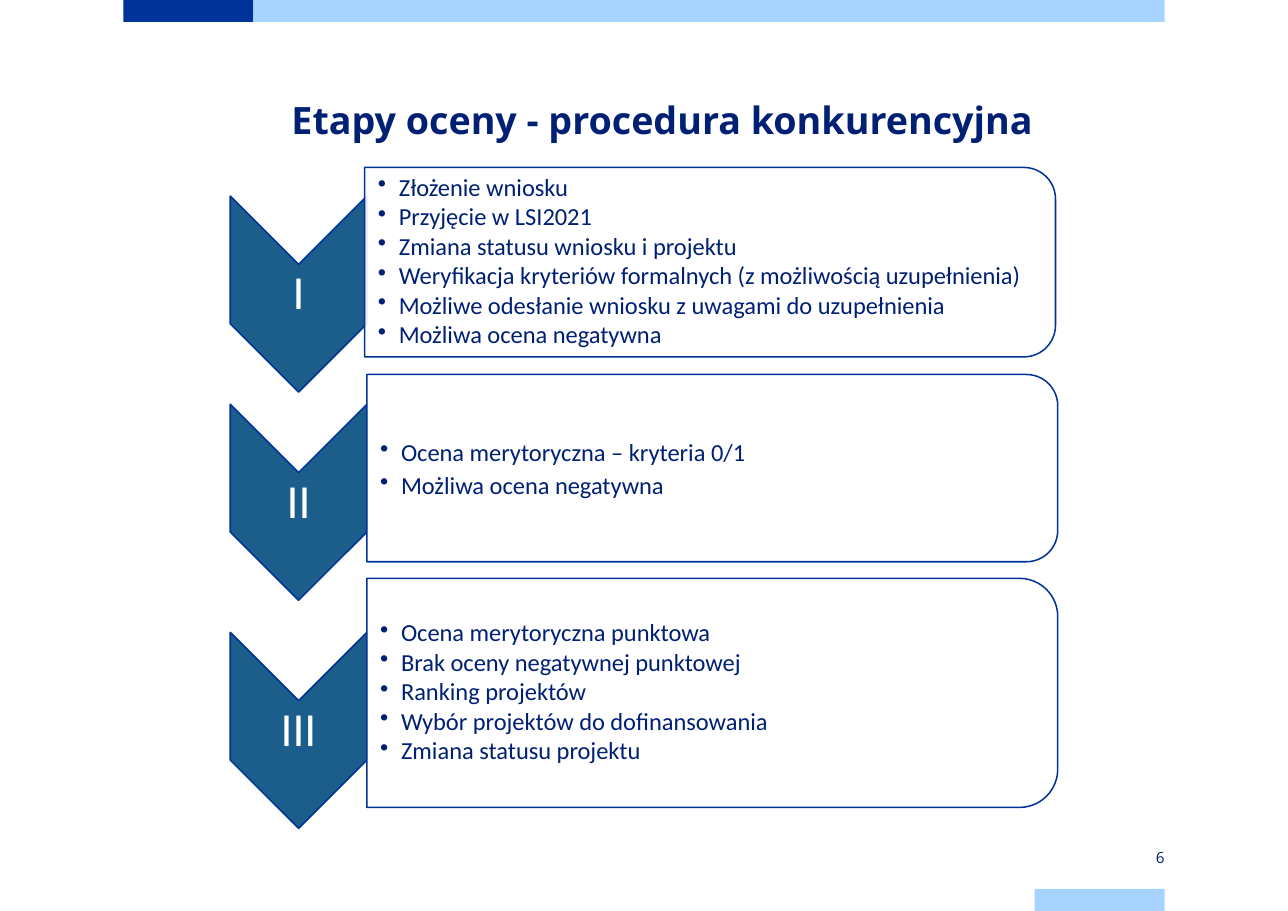
from lxml.etree import SubElement
from pptx import Presentation
from pptx.dml.color import RGBColor
from pptx.enum.shapes import MSO_SHAPE
from pptx.enum.text import MSO_ANCHOR, PP_ALIGN
from pptx.oxml.ns import qn
from pptx.util import Inches, Pt

COLORS = {
    "navy": "003399",
    "sky": "A6D3FF",
    "text": "002073",
    "steel": "1B5D8B",
    "white": "FFFFFF",
}

BARS = [
    (1.12, 0, 1.18, "navy"),
    (2.3, 0, 8.27, "sky"),
    (9.39, 8.07, 1.18, "sky"),
]

STAGES = [
    {
        "numeral": "I", "chevron_top": 1.78, "left": 3.31, "top": 1.52,
        "height": 1.72, "spacing": 0.9,
        "steps": [
            "Złożenie wniosku",
            "Przyjęcie w LSI2021",
            "Zmiana statusu wniosku i projektu",
            "Weryfikacja kryteriów formalnych (z możliwością uzupełnienia)",
            "Możliwe odesłanie wniosku z uwagami do uzupełnienia",
            "Możliwa ocena negatywna",
        ],
    },
    {
        "numeral": "II", "chevron_top": 3.67, "left": 3.33, "top": 3.4,
        "height": 1.7, "spacing": 1.0,
        "steps": [
            "Ocena merytoryczna – kryteria 0/1",
            "Możliwa ocena negatywna",
        ],
    },
    {
        "numeral": "III", "chevron_top": 5.74, "left": 3.33, "top": 5.25,
        "height": 2.08, "spacing": 0.9,
        "steps": [
            "Ocena merytoryczna punktowa",
            "Brak oceny negatywnej punktowej",
            "Ranking projektów",
            "Wybór projektów do dofinansowania",
            "Zmiana statusu projektu",
        ],
    },
]


def add_bullet(para):
    """Give a paragraph a hanging round bullet."""
    properties = para._p.get_or_add_pPr()
    properties.set("marL", str(Inches(0.19)))
    properties.set("indent", str(-Inches(0.19)))
    SubElement(properties, qn("a:buChar")).set("char", "•")


def add_text(slide, text, left, top, width, height, size=16, font="Calibri",
             color="text", bold=False, align=PP_ALIGN.LEFT, spacing=1.0,
             inset=0, bullets=False):
    """Add a middle-anchored text box with one paragraph per line of text."""
    box = slide.shapes.add_textbox(
        Inches(left), Inches(top), Inches(width), Inches(height))
    frame = box.text_frame
    frame.word_wrap = True
    frame.vertical_anchor = MSO_ANCHOR.MIDDLE
    frame.margin_left = Inches(inset)
    frame.margin_top = frame.margin_right = frame.margin_bottom = 0
    for index, line in enumerate(text.split("\n")):
        para = frame.add_paragraph() if index else frame.paragraphs[0]
        para.alignment = align
        para.line_spacing = spacing
        if bullets:
            para.space_after = Pt(2)
            add_bullet(para)
        span = para.add_run()
        span.text = line
        span.font.size = Pt(size)
        span.font.name = font
        span.font.bold = bold
        span.font.color.rgb = RGBColor.from_string(COLORS[color])


def add_block(slide, kind, left, top, width, height, fill, line=None):
    """Add a filled preset shape, outlined when a line colour is given."""
    block = slide.shapes.add_shape(
        kind, Inches(left), Inches(top), Inches(width), Inches(height))
    block.shadow.inherit = False
    block.fill.solid()
    block.fill.fore_color.rgb = RGBColor.from_string(COLORS[fill])
    if line:
        block.line.color.rgb = RGBColor.from_string(COLORS[line])
        block.line.width = Pt(1)
    else:
        block.line.fill.background()
    return block


def add_turned_block(slide, kind, left, top, width, height, fill):
    """Add an outlined shape turned by 90 degrees that covers the given area."""
    shift = (width - height) / 2
    block = add_block(slide, kind, left + shift, top - shift, height, width,
                      fill, line="navy")
    block.rotation = 90
    return block


def add_stage(slide, numeral, chevron_top, left, top, height, spacing, steps):
    """Add a numbered chevron and the panel that lists its steps."""
    add_turned_block(slide, MSO_SHAPE.CHEVRON, 2.09, chevron_top, 1.24, 1.78,
                     "steel")
    add_text(slide, numeral, 2.09, chevron_top + 0.63, 1.24, 0.53, size=31,
             color="white", align=PP_ALIGN.CENTER, spacing=0.9)
    panel = add_turned_block(slide, MSO_SHAPE.ROUND_2_SAME_RECTANGLE, left, top,
                             6.27, height, "white")
    shade = panel._element.spPr.find(qn("a:solidFill"))[0]
    SubElement(shade, qn("a:alpha")).set("val", "90000")
    add_text(slide, "\n".join(steps), left, top + 0.09, 6.19, height - 0.18,
             spacing=spacing, inset=0.12, bullets=True)


def main():
    """Build the slide on the stages of assessment."""
    deck = Presentation()
    deck.slide_width, deck.slide_height = Inches(11.69), Inches(8.27)
    slide = deck.slides.add_slide(deck.slide_layouts[6])
    for left, top, width, color in BARS:
        add_block(slide, MSO_SHAPE.RECTANGLE, left, top, width, 0.2, color)
    add_text(slide, "Etapy oceny - procedura konkurencyjna", 2.25, 0.74, 7.52,
             0.6, size=24.6, font="Open Sans", bold=True,
             align=PP_ALIGN.CENTER, spacing=Pt(36))
    add_text(slide, "6", 9.39, 7.68, 1.18, 0.2, size=10, font="Open Sans",
             align=PP_ALIGN.RIGHT)
    for stage in STAGES:
        add_stage(slide, **stage)
    deck.save("out.pptx")


if __name__ == "__main__":
    main()
